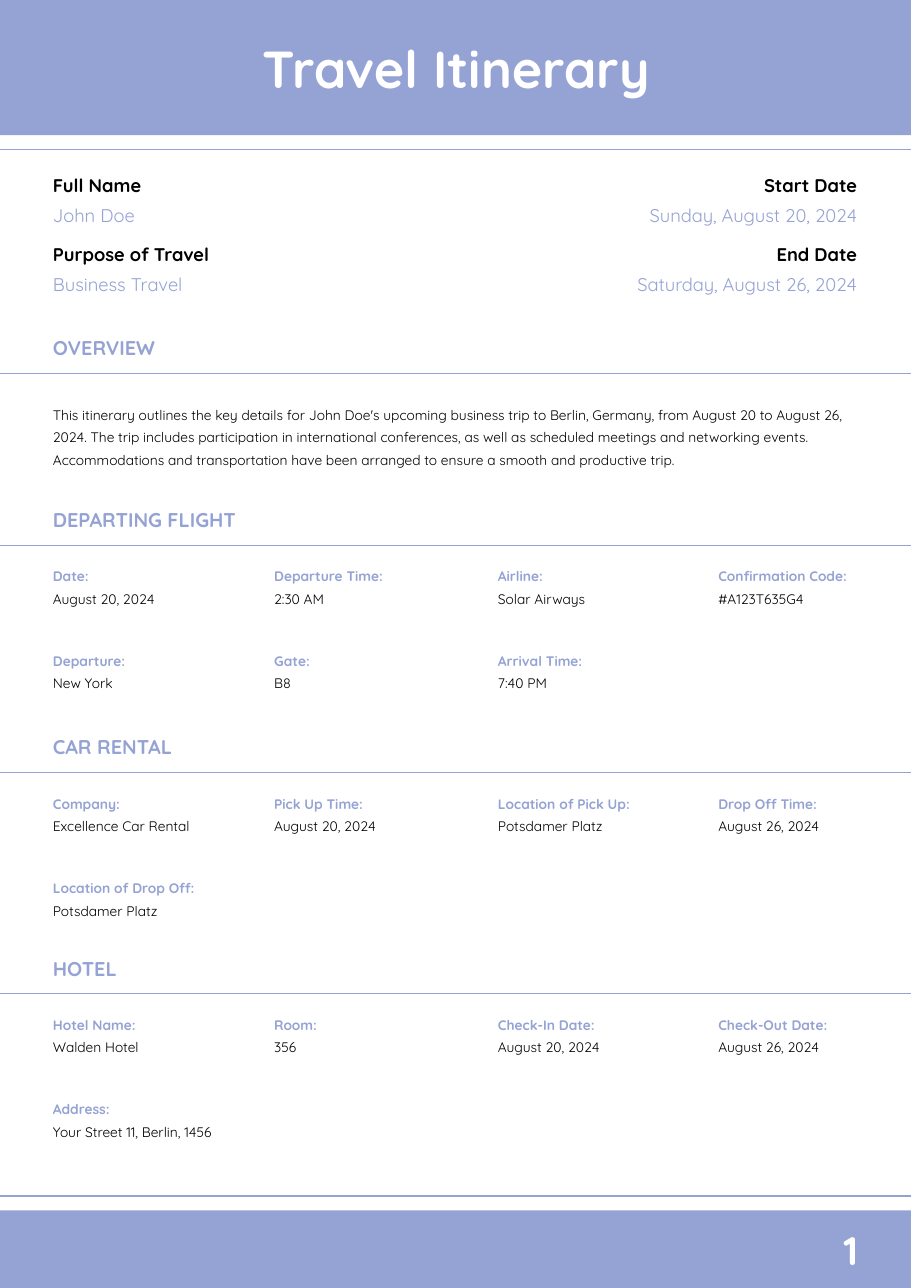
import dataclasses

import lxml.etree
import pptx
import pptx.dml.color
import pptx.enum.shapes
import pptx.enum.text
import pptx.oxml.ns
import pptx.shapes.base
import pptx.slide
import pptx.util

Cm = pptx.util.Cm
Pt = pptx.util.Pt
ALIGN = pptx.enum.text.PP_ALIGN

COLORS: dict[str, str] = {"theme": "95A3D4", "text": "000000", "white": "FFFFFF"}
FONT = "Quicksand"
PAGE_W, PAGE_H = 21.0, 29.7
MARGIN = 1.22
BODY_W = 18.54


@dataclasses.dataclass(frozen=True)
class Style:
    size: float
    color: str
    bold: bool = False
    align: ALIGN = ALIGN.LEFT
    spacing: float | None = None


@dataclasses.dataclass(frozen=True)
class Box:
    left: float
    top: float
    width: float
    height: float


@dataclasses.dataclass(frozen=True)
class Field:
    label: str
    value: str


@dataclasses.dataclass(frozen=True)
class Section:
    """A heading, the rule under it at top, and a grid of fields."""
    name: str
    top: float
    fields: tuple[Field, ...] = ()


TITLE = Style(34, "white", True, ALIGN.CENTER)
HEADING = Style(13, "theme", True)
LABEL = Style(9, "theme", True)
VALUE = Style(9, "text")
BODY = Style(9, "text", spacing=1.35)
NUMBER = Style(26, "white", True, ALIGN.RIGHT)

COLUMNS = ((MARGIN, 4.52), (6.32, 4.52), (11.48, 4.52), (16.56, 3.18))
GRID_TOP, GRID_STEP, VALUE_DROP = 0.53, 1.95, 0.52

OVERVIEW = (
    "This itinerary outlines the key details for John Doe's upcoming business trip "
    "to Berlin, Germany, from August 20 to August 26, 2024. The trip includes "
    "participation in international conferences, as well as scheduled meetings and "
    "networking events. Accommodations and transportation have been arranged to "
    "ensure a smooth and productive trip."
)

TRIP = (
    (ALIGN.LEFT, MARGIN, (
        Field("Full Name", "John Doe"),
        Field("Purpose of Travel", "Business Travel"),
    )),
    (ALIGN.RIGHT, 11.96, (
        Field("Start Date", "Sunday, August 20, 2024"),
        Field("End Date", "Saturday, August 26, 2024"),
    )),
)

SECTIONS = (
    Section("OVERVIEW", 8.61),
    Section("DEPARTING FLIGHT", 12.57, (
        Field("Date:", "August 20, 2024"),
        Field("Departure Time:", "2:30 AM"),
        Field("Airline:", "Solar Airways"),
        Field("Confirmation Code:", "#A123T635G4"),
        Field("Departure:", "New York"),
        Field("Gate:", "B8"),
        Field("Arrival Time:", "7:40 PM"),
    )),
    Section("CAR RENTAL", 17.81, (
        Field("Company:", "Excellence Car Rental"),
        Field("Pick Up Time:", "August 20, 2024"),
        Field("Location of Pick Up:", "Potsdamer Platz"),
        Field("Drop Off Time:", "August 26, 2024"),
        Field("Location of Drop Off:", "Potsdamer Platz"),
    )),
    Section("HOTEL", 22.91, (
        Field("Hotel Name:", "Walden Hotel"),
        Field("Room:", "356"),
        Field("Check-In Date:", "August 20, 2024"),
        Field("Check-Out Date:", "August 26, 2024"),
        Field("Address:", "Your Street 11, Berlin, 1456"),
    )),
)


def get_color(name: str) -> pptx.dml.color.RGBColor:
    return pptx.dml.color.RGBColor.from_string(COLORS[name])


def write_text(shape: pptx.shapes.base.BaseShape, text: str, style: Style) -> None:
    frame = shape.text_frame
    frame.margin_left = frame.margin_right = 0
    frame.margin_top = frame.margin_bottom = 0
    frame.word_wrap = True
    frame.auto_size = pptx.enum.text.MSO_AUTO_SIZE.SHAPE_TO_FIT_TEXT
    frame.vertical_anchor = pptx.enum.text.MSO_ANCHOR.TOP
    para = frame.paragraphs[0]
    para.alignment = style.align
    para.line_spacing = style.spacing
    run = para.add_run()
    run.text = text
    run.font.name = FONT
    run.font.size = Pt(style.size)
    run.font.bold = style.bold
    run.font.color.rgb = get_color(style.color)


def add_text(slide: pptx.slide.Slide, box: Box, text: str, style: Style) -> None:
    lengths = map(Cm, dataclasses.astuple(box))
    write_text(slide.shapes.add_textbox(*lengths), text, style)


def add_band(slide: pptx.slide.Slide, top: float, height: float) -> None:
    band = slide.shapes.add_shape(
        pptx.enum.shapes.MSO_SHAPE.RECTANGLE, 0, Cm(top), Cm(PAGE_W), Cm(height))
    band.shadow.inherit = False
    band.fill.solid()
    band.fill.fore_color.rgb = get_color("theme")
    band.line.fill.background()


def add_rule(slide: pptx.slide.Slide, top: float) -> None:
    rule = slide.shapes.add_connector(
        pptx.enum.shapes.MSO_CONNECTOR.STRAIGHT, 0, Cm(top), Cm(PAGE_W), Cm(top))
    rule.line.color.rgb = get_color("theme")
    rule.line.width = Pt(0.75)
    lxml.etree.SubElement(rule.element.spPr, pptx.oxml.ns.qn("a:effectLst"))


def add_title(slide: pptx.slide.Slide, box: Box, text: str) -> None:
    """Fill the title and lift it above the band."""
    title = slide.shapes.title
    title.left, title.top, title.width, title.height = map(Cm, dataclasses.astuple(box))
    write_text(title, text, TITLE)
    title.element.getparent().append(title.element)


def add_trip(slide: pptx.slide.Slide) -> None:
    for align, left, fields in TRIP:
        for row, field in enumerate(fields):
            top = 4.01 + 1.59 * row
            add_text(slide, Box(left, top, 7.8, 0.52), field.label,
                     Style(12, "text", True, align))
            add_text(slide, Box(left, top + 0.7, 7.8, 0.52), field.value,
                     Style(12, "theme", False, align))


def add_section(slide: pptx.slide.Slide, section: Section) -> None:
    add_rule(slide, section.top)
    add_text(slide, Box(MARGIN, section.top - 0.86, 7.8, 0.56), section.name, HEADING)
    for index, field in enumerate(section.fields):
        row, column = divmod(index, len(COLUMNS))
        left, width = COLUMNS[column]
        top = section.top + GRID_TOP + GRID_STEP * row
        add_text(slide, Box(left, top, width, 0.38), field.label, LABEL)
        add_text(slide, Box(left, top + VALUE_DROP, width, 0.38), field.value, VALUE)


def main() -> None:
    deck = pptx.Presentation()
    deck.slide_width, deck.slide_height = Cm(PAGE_W), Cm(PAGE_H)
    slide = deck.slides.add_slide(deck.slide_layouts.get_by_name("Title Only"))
    add_band(slide, 27.91, 1.79)
    add_band(slide, 0, 3.12)
    add_rule(slide, 3.45)
    add_title(slide, Box(4.32, 0.84, 12.4, 1.45), "Travel Itinerary")
    add_trip(slide)
    for section in SECTIONS:
        add_section(slide, section)
    add_text(slide, Box(MARGIN, 9.25, BODY_W, 1.42), OVERVIEW, BODY)
    add_rule(slide, 27.58)
    add_text(slide, Box(17.6, 28.27, 2.18, 1.12), "1", NUMBER)
    deck.save("out.pptx")


if __name__ == "__main__":
    main()
